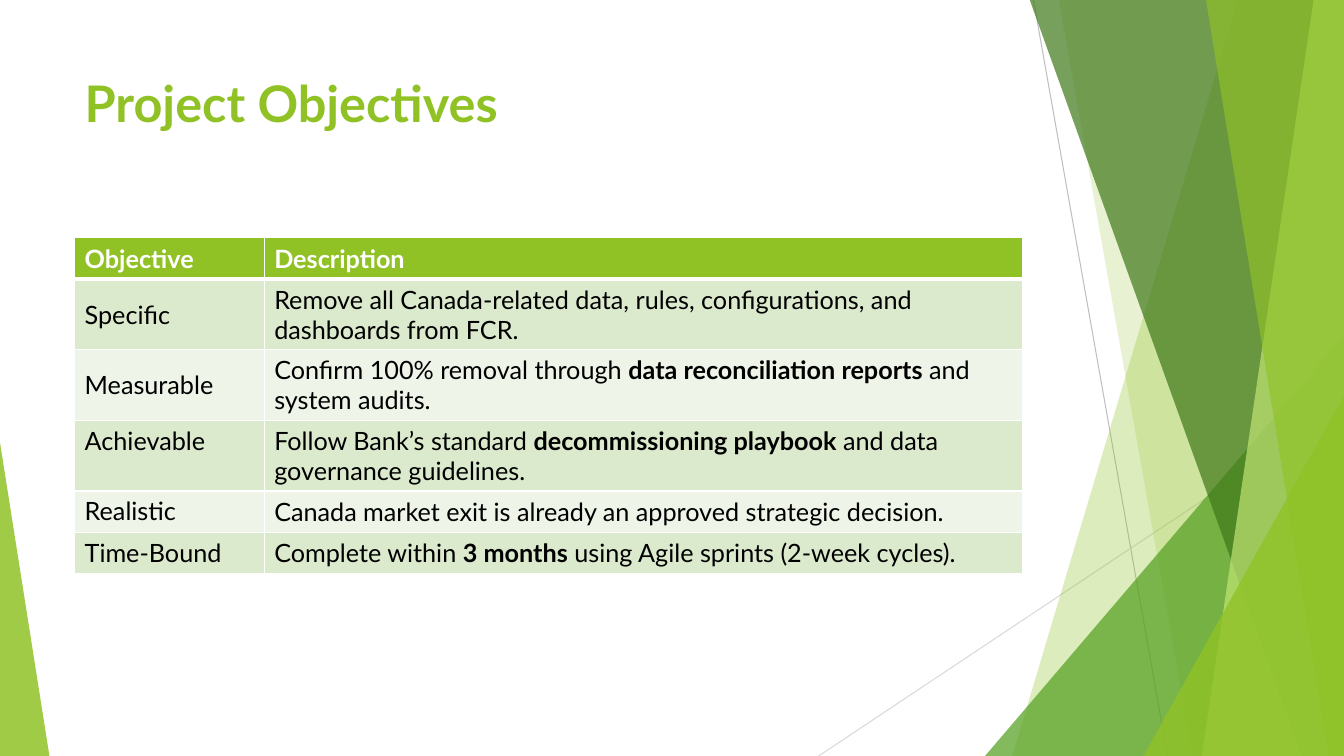
from lxml import etree
from pptx import Presentation
from pptx.dml.color import RGBColor
from pptx.enum import shapes, text
from pptx.oxml import ns
from pptx.util import Inches, Pt

GREEN = RGBColor(0x90, 0xC2, 0x26)
MID_GREEN = RGBColor(0x54, 0xA0, 0x21)
DARK_GREEN = RGBColor(0x3F, 0x78, 0x19)
LIGHT_GREEN = RGBColor(0xC0, 0xE4, 0x74)
BAND_DARK = RGBColor(0xDB, 0xE9, 0xCD)
BAND_LIGHT = RGBColor(0xEE, 0xF4, 0xE8)
GREY = RGBColor(0xBF, 0xBF, 0xBF)
PALE_GREY = RGBColor(0xD9, 0xD9, 0xD9)
WHITE = RGBColor(0xFF, 0xFF, 0xFF)
BLACK = RGBColor(0, 0, 0)
FONT = "Lato"
WIDTH, HEIGHT = 13.33, 7.5


def add_run(p, words, size, color, bold):
    r = p.add_run()
    r.text = words
    r.font.name = FONT
    r.font.size = Pt(size)
    r.font.bold = bold
    r.font.color.rgb = color


def add_border(cell, side, points):
    ln = etree.SubElement(cell._tc.get_or_add_tcPr(), ns.qn(f"a:{side}"), w=str(Pt(points)))
    fill = etree.SubElement(ln, ns.qn("a:solidFill"))
    etree.SubElement(fill, ns.qn("a:srgbClr"), val=str(WHITE))


prs = Presentation()
prs.slide_width, prs.slide_height = Inches(WIDTH), Inches(HEIGHT)
s = prs.slides.add_slide(prs.slide_layouts[5])

for x1, y1, x2, y2, color in [
    (10.25, 0, 11.58, HEIGHT, GREY),
    (WIDTH, 4.03, 8.12, HEIGHT, PALE_GREY),
]:
    line = s.shapes.add_connector(
        shapes.MSO_CONNECTOR.STRAIGHT, Inches(x1), Inches(y1), Inches(x2), Inches(y2))
    line.line.color.rgb = color
    line.line.width = Pt(0.75)
    etree.SubElement(line._element.spPr, ns.qn("a:effectLst"))

facets = [
    ("panel", (12.28, 10.04), GREEN, 30),
    ("panel", (10.5, 11.83), GREEN, 20),
    ("triangle", (9.77, 3.33, 3.56, 1), MID_GREEN, 72),
    ("panel", (10.21, 12.91), DARK_GREEN, 70),
    ("panel", (13.03, 11.92), LIGHT_GREEN, 70),
    ("panel", (11.96, 13.18), GREEN, 65),
    ("triangle", (11.34, 3.93, 1.99, 1), GREEN, 80),
    ("triangle", (0, 4.39, 0.49, 0), GREEN, 85),
]
for kind, place, color, opacity in facets:
    if kind == "panel":
        top_x, bottom_x = place
        outline = s.shapes.build_freeform(Inches(top_x), Inches(-0.01))
        outline.add_line_segments([
            (Inches(WIDTH), Inches(-0.01)),
            (Inches(WIDTH), Inches(HEIGHT)),
            (Inches(bottom_x), Inches(HEIGHT)),
        ])
        sp = outline.convert_to_shape()
    else:
        left, top, width, apex = place
        sp = s.shapes.add_shape(
            shapes.MSO_SHAPE.ISOSCELES_TRIANGLE,
            Inches(left), Inches(top), Inches(width), Inches(HEIGHT - top))
        sp.adjustments[0] = apex
    sp.shadow.inherit = False
    sp.line.fill.background()
    sp.fill.solid()
    sp.fill.fore_color.rgb = color
    rgb = sp._element.spPr.find(ns.qn("a:solidFill")).find(ns.qn("a:srgbClr"))
    etree.SubElement(rgb, ns.qn("a:alpha"), val=str(opacity * 1000))

title = s.shapes.title
title.left, title.top = Inches(0.74), Inches(0.67)
title.width, title.height = Inches(9.4), Inches(1.44)
tf = title.text_frame
tf.word_wrap = True
tf.vertical_anchor = text.MSO_ANCHOR.TOP
p = tf.paragraphs[0]
p.alignment = text.PP_ALIGN.LEFT
add_run(p, "Project Objectives", 36, GREEN, True)

rows = [
    ("Objective", ["Description"], 0.41),
    ("Specific", ["Remove all Canada-related data, rules, configurations, and dashboards from FCR."], 0.7),
    ("Measurable", ["Confirm 100% removal through ", "data reconciliation reports",
                    " and system audits."], 0.7),
    ("Achievable", ["Follow Bank’s standard ", "decommissioning playbook",
                    " and data governance guidelines."], 0.7),
    ("Realistic", ["Canada market exit is already an approved strategic decision."], 0.41),
    ("Time-Bound", ["Complete within ", "3 months", " using Agile sprints (2-week cycles)."], 0.41),
]
table = s.shapes.add_table(
    len(rows), 2, Inches(0.74), Inches(2.36), Inches(9.4), Inches(3.33)).table
table.columns[0].width, table.columns[1].width = Inches(1.88), Inches(7.52)

for i, (objective, description, height) in enumerate(rows):
    table.rows[i].height = Inches(height)
    header = i == 0
    band = GREEN if header else BAND_DARK if i % 2 else BAND_LIGHT
    for j, pieces in enumerate([[objective], description]):
        cell = table.cell(i, j)
        top_anchored = j == 0 and objective in ("Achievable", "Realistic")
        cell.vertical_anchor = text.MSO_ANCHOR.TOP if top_anchored else text.MSO_ANCHOR.MIDDLE
        for side, points in [("lnL", 1), ("lnR", 1), ("lnT", 3 if i == 1 else 1),
                             ("lnB", 3 if header else 1)]:
            add_border(cell, side, points)
        cell.fill.solid()
        cell.fill.fore_color.rgb = band
        for k, words in enumerate(pieces):
            add_run(cell.text_frame.paragraphs[0], words, 18,
                    WHITE if header else BLACK, header or k == 1)

prs.save("out.pptx")
